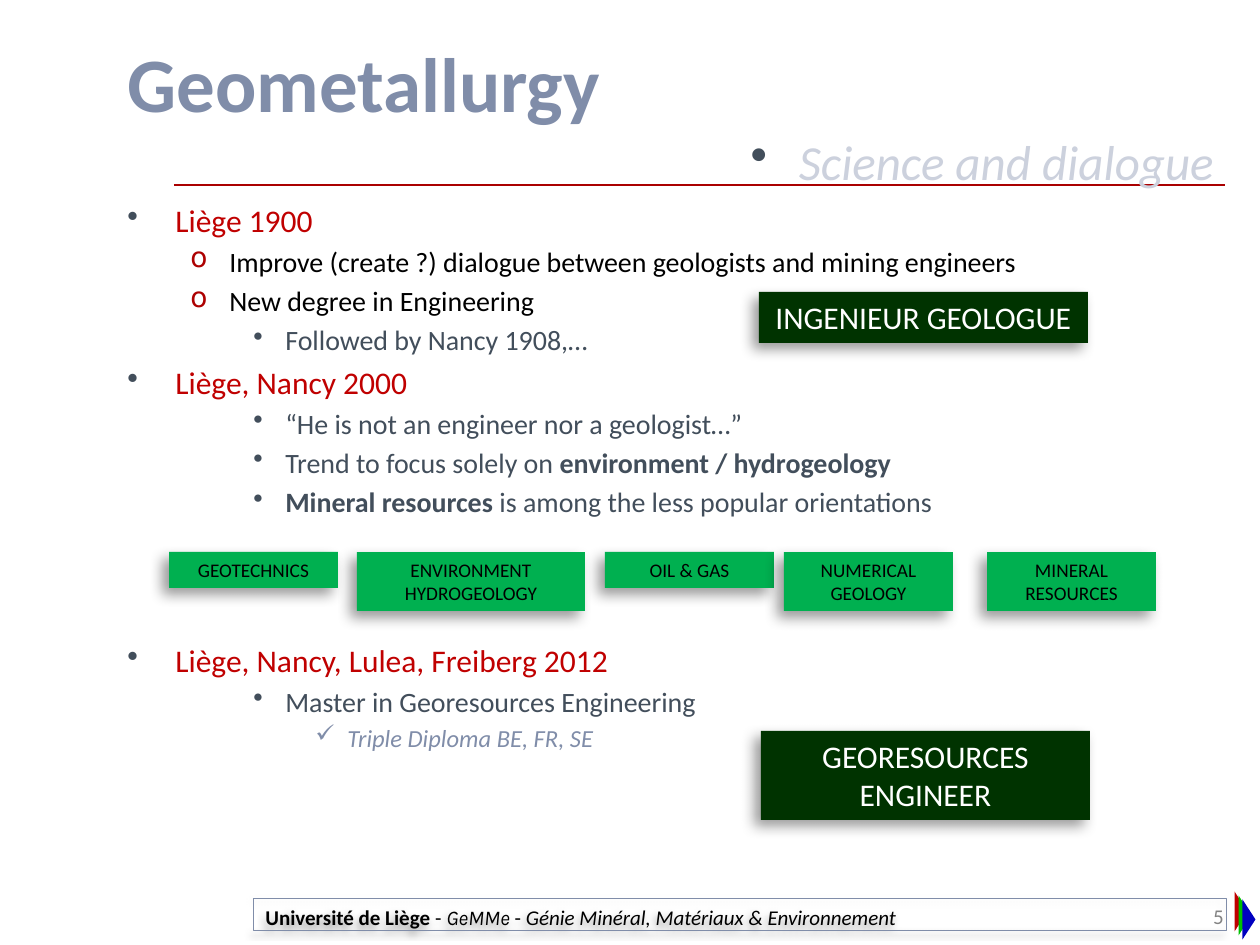
from lxml.etree import SubElement
from pptx import Presentation
from pptx.dml.color import RGBColor
from pptx.enum.shapes import MSO_CONNECTOR, MSO_SHAPE
from pptx.enum.text import MSO_ANCHOR, MSO_AUTO_SIZE, PP_ALIGN
from pptx.oxml.ns import qn
from pptx.util import Pt

SCALE = 914400 / 126
RED, SLATE, BLUE, BLACK = "C00000", "424E5B", "808DA9", "000000"

# level: indent and hang in px, bullet, bullet colour, text format
LEVELS = [
    (48, 48, "•", SLATE, dict(size=18, color=RED)),
    (102, 39, "o", "AD0101", dict(size=16, color=BLACK)),
    (158, 32, "•", SLATE, dict(size=16, color=SLATE)),
    (220, 32, "✓", BLUE, dict(size=14, color=BLUE, italic=True)),
]
BOLD, ITALIC = dict(bold=True), dict(italic=True)
TILE_GAP = 70  # points left free for the row of tiles

# level, runs, space before in points (None: a fifth of the text size)
OUTLINE = [
    (0, [("Liège 1900", {})], 0),
    (1, [("Improve (create ?) dialogue between geologists and mining engineers", {})], None),
    (1, [("New degree in Engineering", {})], None),
    (2, [("Followed by Nancy 1908,…", {})], None),
    (0, [("Liège, Nancy 2000", {})], None),
    (2, [("“He is not an engineer nor a geologist…”", {})], None),
    (2, [("Trend to focus solely on ", {}), ("environment / hydrogeology", BOLD)], None),
    (2, [("Mineral resources", BOLD), (" is among the less popular orientations", {})], None),
    (0, [("Liège, Nancy, Lulea, Freiberg 2012", {})], TILE_GAP),
    (2, [("Master in Georesources Engineering", {})], None),
    (3, [("Triple Diploma BE, FR, SE", {})], None),
]
FOOTER = [
    ("Université de Liège", BOLD),
    (" - ", {}),
    ("GeMMe", dict(italic=True, name="Karla")),
    (" -", {}),
    (" Génie Minéral, Matériaux & Environnement", ITALIC),
]
DEGREES = [
    ("INGENIEUR GEOLOGUE", (759, 292, 329, 51)),
    ("GEORESOURCES ENGINEER", (761, 731, 329, 89)),
]
# text, left, width, height
TILES = [
    ("GEOTECHNICS", 169, 169, 36),
    ("ENVIRONMENT\nHYDROGEOLOGY", 357, 228, 59),
    ("OIL & GAS", 605, 169, 36),
    ("NUMERICAL GEOLOGY", 784, 169, 59),
    ("MINERAL\nRESOURCES", 987, 169, 59),
]
TILE_TOP = 552
FLAGS = [RED, "00C000", "0000C0"]


def px(*values):
    return [round(v * SCALE) for v in values]


def rgb(code):
    return RGBColor.from_string(code)


def write(para, runs, **base):
    for text, extra in runs:
        style = {"name": "Calibri", **base, **extra}
        color = style.pop("color")
        style["size"] = Pt(style["size"])
        for i, line in enumerate(text.split("\n")):
            if i:
                para.add_line_break()
            run = para.add_run()
            run.text = line
            run.font.color.rgb = rgb(color)
            for key, value in style.items():
                setattr(run.font, key, value)


def bullet(para, level):
    indent, hang, char, color, _ = LEVELS[level]
    props = para._p.get_or_add_pPr()
    left, first = px(indent, -hang)
    props.set("marL", str(left))
    props.set("indent", str(first))
    SubElement(SubElement(props, qn("a:buClr")), qn("a:srgbClr"), val=color)
    SubElement(props, qn("a:buChar"), char=char)


def shade(shape, blur, dist):
    """Give a shape a soft shadow to the lower left; blur and dist in points."""
    shape.shadow.inherit = False
    effects = shape._element.spPr.find(qn("a:effectLst"))
    outer = SubElement(effects, qn("a:outerShdw"), blurRad=str(Pt(blur)), dist=str(Pt(dist)),
                       dir="8100000", algn="tr", rotWithShape="0")
    tint = SubElement(outer, qn("a:srgbClr"), val=BLACK)
    SubElement(tint, qn("a:alpha"), val="40000")


def textbox(slide, area, anchor=MSO_ANCHOR.TOP):
    frame = slide.shapes.add_textbox(*px(*area)).text_frame
    frame.word_wrap = True
    frame.vertical_anchor = anchor
    return frame


def shape(slide, kind, area, fill=None):
    item = slide.shapes.add_shape(kind, *px(*area))
    item.shadow.inherit = False
    if fill:
        item.fill.solid()
        item.fill.fore_color.rgb = rgb(fill)
    else:
        item.fill.background()
    item.line.fill.background()
    return item


def label(slide, text, area, fill, **style):
    item = shape(slide, MSO_SHAPE.RECTANGLE, area, fill)
    shade(item, 8, 5)
    frame = item.text_frame
    frame.word_wrap = True
    frame.auto_size = MSO_AUTO_SIZE.SHAPE_TO_FIT_TEXT
    frame.vertical_anchor = MSO_ANCHOR.TOP
    para = frame.paragraphs[0]
    para.alignment = PP_ALIGN.CENTER
    write(para, [(text, {})], **style)


def frame_page(slide):
    """Draw the footer, the rule under the title and the corner flags."""
    foot = shape(slide, MSO_SHAPE.RECTANGLE, (253, 898, 973, 32))
    foot.line.color.rgb = rgb(BLUE)
    foot.line.width = Pt(0.25)
    shade(foot, 4, 3)
    foot.text_frame.vertical_anchor = MSO_ANCHOR.TOP
    para = foot.text_frame.paragraphs[0]
    para.alignment = PP_ALIGN.LEFT
    write(para, FOOTER, size=12, color=BLACK)

    rule = slide.shapes.add_connector(MSO_CONNECTOR.STRAIGHT, *px(174, 185, 1225, 185))
    rule.line.color.rgb = rgb("AA0000")
    rule.line.width = Pt(1.5)
    SubElement(rule._element.spPr, qn("a:effectLst"))

    for i, color in enumerate(FLAGS):
        flag = shape(slide, MSO_SHAPE.ISOSCELES_TRIANGLE, (1221 + 4 * i, 905 + 4 * i, 40, 13), color)
        flag.rotation = 90


def main():
    deck = Presentation()
    deck.slide_width, deck.slide_height = px(1260, 945)
    slide = deck.slides.add_slide(deck.slide_layouts[6])
    frame_page(slide)

    title = textbox(slide, (115, 26, 1111, 108), MSO_ANCHOR.BOTTOM)
    write(title.paragraphs[0], [("Geometallurgy", BOLD)], size=44, color=BLUE)

    body = textbox(slide, (115, 195, 1111, 684))
    for i, (level, runs, gap) in enumerate(OUTLINE):
        para = body.add_paragraph() if i else body.paragraphs[0]
        style = LEVELS[level][-1]
        para.level = level
        bullet(para, level)
        para.space_before = Pt(style["size"] / 5 if gap is None else gap)
        write(para, runs, **style)

    motto = textbox(slide, (115, 125, 1111, 79)).paragraphs[0]
    bullet(motto, 0)
    motto.alignment = PP_ALIGN.RIGHT
    write(motto, [("Science and dialogue", ITALIC)], size=28, color="CCD1DD")

    number = textbox(slide, (1213, 900, 47, 33), MSO_ANCHOR.MIDDLE)
    for side in ("left", "top", "right", "bottom"):
        setattr(number, f"margin_{side}", 0)
    write(number.paragraphs[0], [("5", {})], size=12, color="838383")

    for text, area in DEGREES:
        label(slide, text, area, "003300", size=18, color="FFFFFF")
    for text, left, width, height in TILES:
        label(slide, text, (left, TILE_TOP, width, height), "00B050", size=11, color=BLACK)

    deck.save("out.pptx")


if __name__ == "__main__":
    main()
